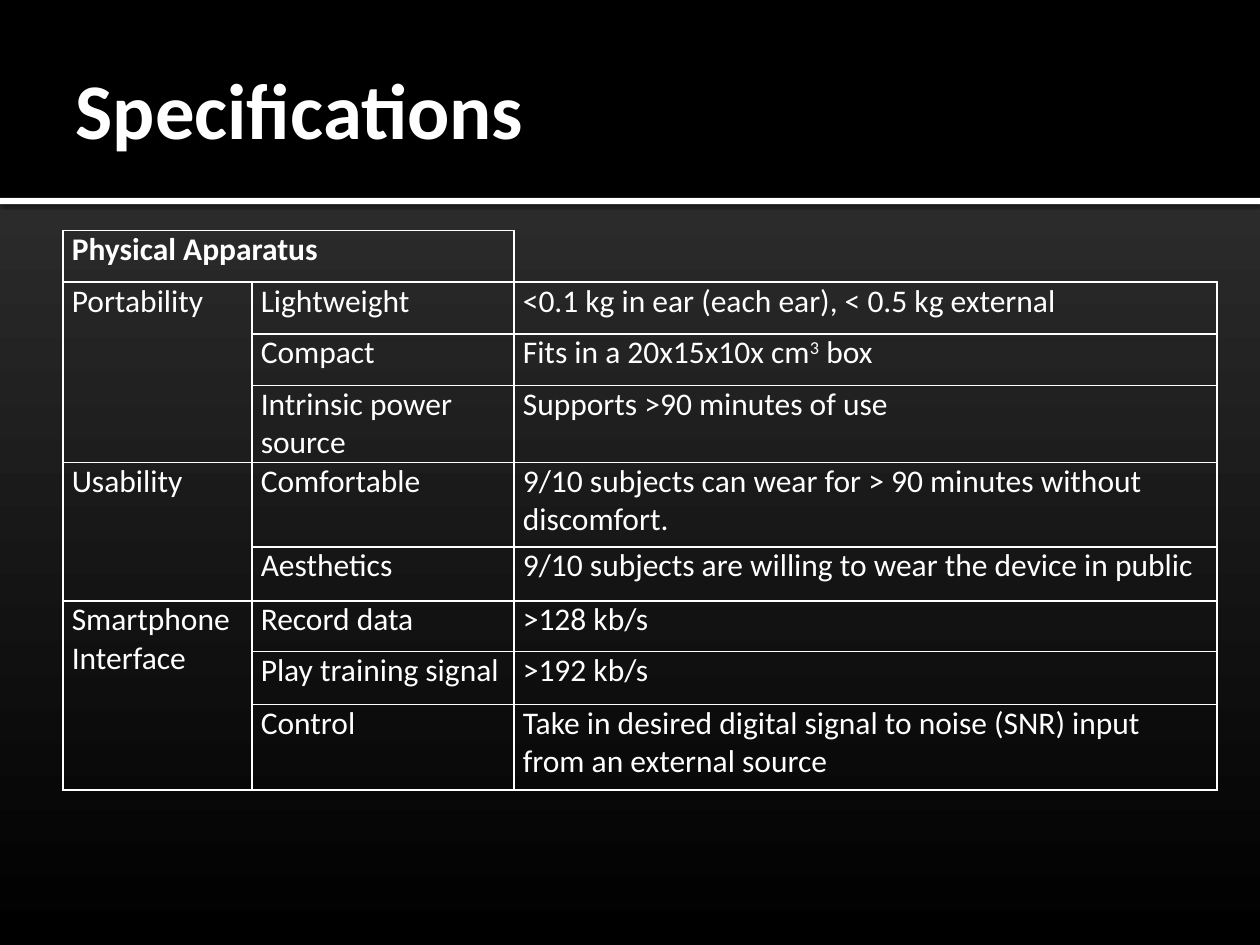
from lxml import etree
from pptx import Presentation
from pptx.dml.color import RGBColor
from pptx.enum.shapes import MSO_SHAPE
from pptx.enum.text import MSO_ANCHOR, PP_ALIGN
from pptx.oxml import parse_xml
from pptx.oxml.ns import nsdecls, qn
from pptx.util import Inches, Pt

RECTANGLE = MSO_SHAPE.RECTANGLE
MIDDLE, LEFT = MSO_ANCHOR.MIDDLE, PP_ALIGN.LEFT
FONT, WHITE, BLACK, CHARCOAL = "Calibri", "FFFFFF", "000000", "373737"
TITLE = "Specifications"
HEADING = "Physical Apparatus"
# A cell is a string, or a list of runs in which "^" marks a superscript.
GROUPS = [
    ("Portability", [
        ("Lightweight", "<0.1 kg in ear (each ear), < 0.5 kg external"),
        ("Compact", ["Fits in a 20x15x10x cm", "^3", " box"]),
        ("Intrinsic power source", "Supports >90 minutes of use"),
    ]),
    ("Usability", [
        ("Comfortable", "9/10 subjects can wear for > 90 minutes without discomfort."),
        ("Aesthetics", "9/10 subjects are willing to wear the device in public"),
    ]),
    ("Smartphone Interface", [
        ("Record data", ">128 kb/s"),
        ("Play training signal", ">192 kb/s"),
        ("Control", "Take in desired digital signal to noise (SNR) input from an external source"),
    ]),
]
COLUMN_WIDTHS = [1.5, 2.08, 5.58]
ROW_HEIGHTS = [0.41, 0.41, 0.41, 0.41, 0.67, 0.43, 0.4, 0.42, 0.68]
TABLE_LEFT, TABLE_TOP = 0.5, 1.83
SLIDE_WIDTH, SLIDE_HEIGHT = 10, 7.5
BAND_HEIGHT, RULE_HEIGHT = 1.57, 0.05


def color(value):
    return RGBColor.from_string(value)


def format_run(run, size, bold):
    run.font.name, run.font.size, run.font.bold = FONT, Pt(size), bold
    run.font.color.rgb = color(WHITE)


def add_band(slide, top, height, fill):
    band = slide.shapes.add_shape(
        RECTANGLE, 0, Inches(top), Inches(SLIDE_WIDTH), Inches(height))
    band.shadow.inherit = False
    band.fill.solid()
    band.fill.fore_color.rgb = color(fill)
    band.line.fill.background()
    return band


def add_soft_shadow(shape):
    effects = shape._element.spPr.find(qn("a:effectLst"))
    effects.append(parse_xml(
        f'<a:outerShdw {nsdecls("a")} blurRad="{Pt(2.5)}" dist="{Pt(0.8)}" dir="5400000">'
        f'<a:srgbClr val="{BLACK}"><a:alpha val="60000"/></a:srgbClr></a:outerShdw>'))


def set_borders(cell, visible_sides):
    properties = cell._tc.get_or_add_tcPr()
    for position, side in enumerate("LRTB"):
        line = etree.Element(qn(f"a:ln{side}"), w=str(Pt(1)))
        if side in visible_sides:
            fill = etree.SubElement(line, qn("a:solidFill"))
            etree.SubElement(fill, qn("a:srgbClr"), val=WHITE)
        else:
            etree.SubElement(line, qn("a:noFill"))
        properties.insert(position, line)


def write_cell(cell, content, bold=False):
    paragraph = cell.text_frame.paragraphs[0]
    for text in [content] if isinstance(content, str) else content:
        run = paragraph.add_run()
        run.text = text.lstrip("^")
        format_run(run, 18, bold)
        if text.startswith("^"):
            run.font._element.set("baseline", "30000")


def add_specification_table(slide):
    table = slide.shapes.add_table(
        len(ROW_HEIGHTS), len(COLUMN_WIDTHS), Inches(TABLE_LEFT), Inches(TABLE_TOP),
        Inches(sum(COLUMN_WIDTHS)), Inches(sum(ROW_HEIGHTS))).table
    table.first_row = table.horz_banding = False
    for column, width in zip(table.columns, COLUMN_WIDTHS):
        column.width = Inches(width)
    for row, height in zip(table.rows, ROW_HEIGHTS):
        row.height = Inches(height)
    corner = table.cell(0, len(COLUMN_WIDTHS) - 1)
    for cell in table.iter_cells():
        cell.fill.background()
        cell.margin_left = cell.margin_right = Inches(0.07)
        cell.margin_top = cell.margin_bottom = 0
        set_borders(cell, "LB" if cell == corner else "LRTB")

    table.cell(0, 0).merge(table.cell(0, 1))
    write_cell(table.cell(0, 0), HEADING, bold=True)
    first = 1
    for group, entries in GROUPS:
        table.cell(first, 0).merge(table.cell(first + len(entries) - 1, 0))
        write_cell(table.cell(first, 0), group)
        for row, entry in enumerate(entries, first):
            for column, content in enumerate(entry, 1):
                write_cell(table.cell(row, column), content)
        first += len(entries)


def place_title(slide):
    title = slide.shapes.title
    title.left, title.top = Inches(0.5), Inches(0.17)
    title.width, title.height = Inches(9), Inches(1.37)
    frame = title.text_frame
    frame.text = TITLE
    frame.word_wrap = True
    frame.vertical_anchor = MIDDLE
    frame.margin_left = Inches(0.1)
    frame.margin_right = frame.margin_top = frame.margin_bottom = Inches(0.05)
    paragraph = frame.paragraphs[0]
    paragraph.alignment = LEFT
    format_run(paragraph.runs[0], 45, True)
    slide.shapes._spTree.append(title._element)  # in front of the header band


def main():
    presentation = Presentation()
    presentation.slide_width = Inches(SLIDE_WIDTH)
    presentation.slide_height = Inches(SLIDE_HEIGHT)
    slide = presentation.slides.add_slide(presentation.slide_layouts[5])
    background = slide.background.fill
    background.gradient()
    background.gradient_angle = 270  # counter-clockwise: runs top to bottom
    for stop, shade, position in zip(background.gradient_stops, (CHARCOAL, BLACK), (0, 1)):
        stop.color.rgb = color(shade)
        stop.position = position
    add_soft_shadow(add_band(slide, BAND_HEIGHT, RULE_HEIGHT, WHITE))
    add_band(slide, 0, BAND_HEIGHT, BLACK)
    place_title(slide)
    add_specification_table(slide)
    presentation.save("out.pptx")


if __name__ == "__main__":
    main()
